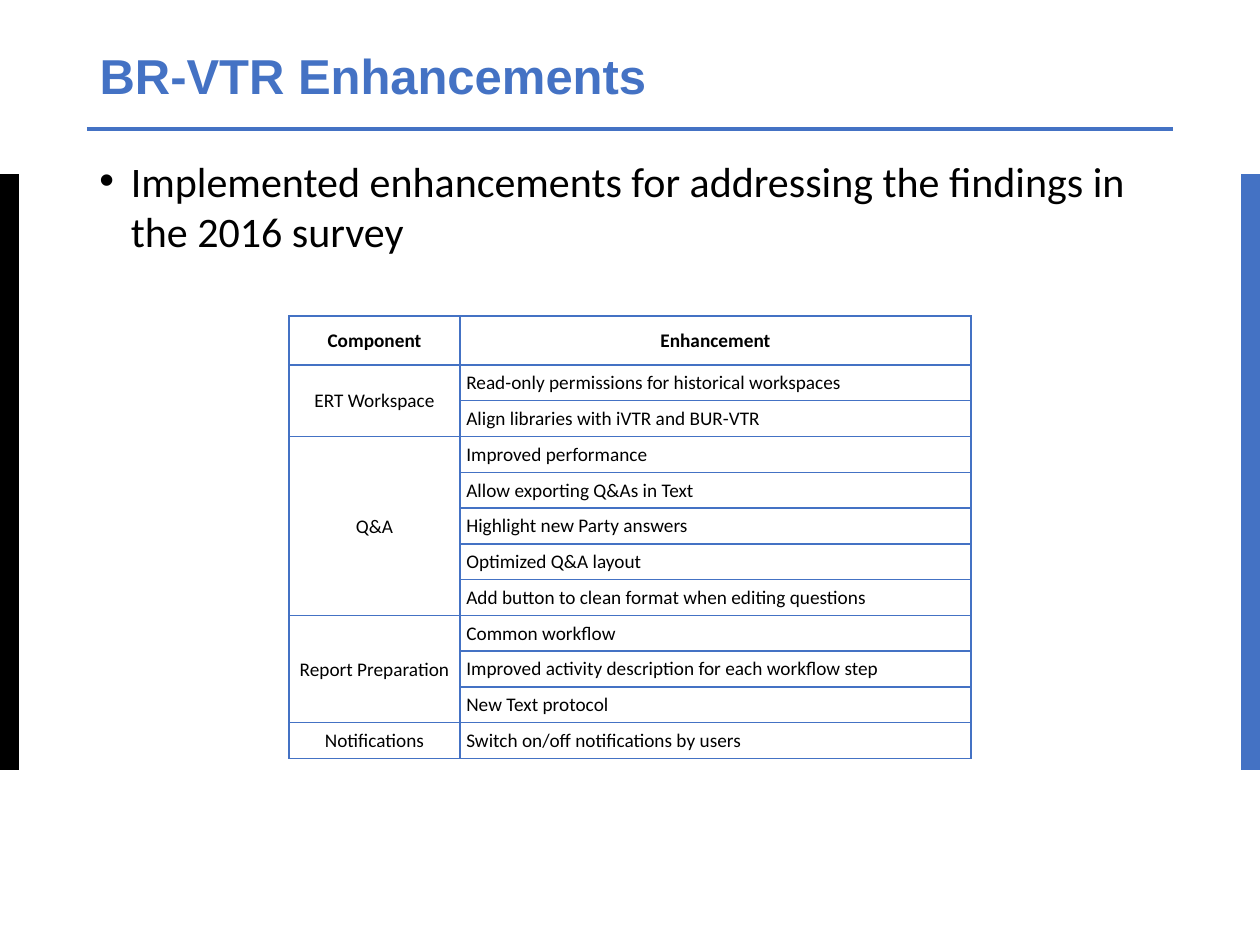
from lxml import etree
from pptx import Presentation
from pptx import util as u
from pptx.dml.color import RGBColor
from pptx.enum import shapes, text
from pptx.oxml import ns

COLORS = {"accent": "4472C4", "ink": "000000"}
SCALE = 914400 / 126

COMPONENTS = [
    ("ERT Workspace", [
        "Read-only permissions for historical workspaces",
        "Align libraries with iVTR and BUR-VTR",
    ]),
    ("Q&A", [
        "Improved performance",
        "Allow exporting Q&As in Text",
        "Highlight new Party answers",
        "Optimized Q&A layout",
        "Add button to clean format when editing questions",
    ]),
    ("Report Preparation", [
        "Common workflow",
        "Improved activity description for each workflow step",
        "New Text protocol",
    ]),
    ("Notifications", ["Switch on/off notifications by users"]),
]


def px(length):
    return u.Emu(round(length * SCALE))


def color(name):
    return RGBColor.from_string(COLORS[name])


def sub(parent, tag, **attributes):
    return etree.SubElement(parent, ns.qn(tag), attributes)


class Deck:
    def __init__(self, width, height):
        self.presentation = Presentation()
        self.presentation.slide_width = px(width)
        self.presentation.slide_height = px(height)
        self.slide = None

    def new_slide(self):
        layout = self.presentation.slide_layouts[5]
        self.slide = self.presentation.slides.add_slide(layout)

    def run(self, paragraph, words, size, name="Calibri", ink="ink", bold=False):
        run = paragraph.add_run()
        run.text = words
        run.font.size = u.Pt(size)
        run.font.name = name
        run.font.bold = bold
        run.font.color.rgb = color(ink)

    def title(self, words, left, top, width, height):
        heading = self.slide.shapes.title
        heading.left, heading.top = px(left), px(top)
        heading.width, heading.height = px(width), px(height)
        frame = heading.text_frame
        frame.vertical_anchor = text.MSO_ANCHOR.MIDDLE
        paragraph = frame.paragraphs[0]
        paragraph.alignment = text.PP_ALIGN.LEFT
        paragraph.line_spacing = 0.9
        self.run(paragraph, words, 28, "Arial", "accent", True)

    def rule(self, left, right, y):
        line = self.slide.shapes.add_connector(
            shapes.MSO_CONNECTOR.STRAIGHT, px(left), px(y), px(right), px(y))
        line.line.color.rgb = color("accent")
        line.line.width = u.Pt(2.25)
        sub(line._element.spPr, "a:effectLst")

    def bar(self, left, top, width, height, fill):
        bar = self.slide.shapes.add_shape(
            shapes.MSO_SHAPE.RECTANGLE, px(left), px(top), px(width), px(height))
        bar.shadow.inherit = False
        bar.fill.solid()
        bar.fill.fore_color.rgb = color(fill)
        bar.line.fill.background()

    def bullet(self, words, left, top, width, height):
        box = self.slide.shapes.add_textbox(px(left), px(top), px(width), px(height))
        box.text_frame.word_wrap = True
        paragraph = box.text_frame.paragraphs[0]
        properties = paragraph._p.get_or_add_pPr()
        properties.set("marL", str(u.Inches(0.25)))
        properties.set("indent", str(-u.Inches(0.25)))
        sub(properties, "a:buFont", typeface="Arial")
        sub(properties, "a:buChar", char="•")
        paragraph.space_after = u.Pt(6)
        self.run(paragraph, words, 24)

    def borders(self, cell):
        properties = cell._tc.get_or_add_tcPr()
        for side in ("a:lnL", "a:lnR", "a:lnT", "a:lnB"):
            line = sub(properties, side, w=str(u.Pt(1)))
            sub(sub(line, "a:solidFill"), "a:srgbClr", val=COLORS["accent"])

    def cell(self, cell, words, centered=False, bold=False):
        inset = u.Inches(0.01 if centered else 0.05)
        cell.margin_left = cell.margin_right = cell.margin_top = inset
        cell.margin_bottom = 0 if centered else inset
        cell.vertical_anchor = text.MSO_ANCHOR.MIDDLE
        paragraph = cell.text_frame.paragraphs[0]
        paragraph.alignment = text.PP_ALIGN.CENTER if centered else text.PP_ALIGN.LEFT
        self.run(paragraph, words, 11, bold=bold)

    def table(self, headings, groups, left, top, widths, header_height, row_height):
        count = sum(len(items) for _, items in groups)
        frame = self.slide.shapes.add_table(
            count + 1, len(widths), px(left), px(top),
            px(sum(widths)), px(header_height + count * row_height))
        table = frame.table
        table.first_row = table.horz_banding = False
        for column, width in zip(table.columns, widths):
            column.width = px(width)
        for index, row in enumerate(table.rows):
            row.height = px(row_height if index else header_height)
            for cell in row.cells:
                self.borders(cell)
                cell.fill.background()
        for column, heading in enumerate(headings):
            self.cell(table.cell(0, column), heading, centered=True, bold=True)
        start = 1
        for component, enhancements in groups:
            end = start + len(enhancements) - 1
            if end > start:
                table.cell(start, 0).merge(table.cell(end, 0))
            self.cell(table.cell(start, 0), component, centered=True)
            for row, enhancement in enumerate(enhancements, start):
                self.cell(table.cell(row, 1), enhancement)
            start = end + 1


def main():
    deck = Deck(1260, 945)
    deck.new_slide()
    deck.rule(87, 1173, 129)
    deck.bar(0, 174, 19, 596, "ink")
    deck.bar(1241, 174, 19, 596, "accent")
    deck.title("BR-VTR Enhancements", 87, 29, 1086, 99)
    deck.bullet("Implemented enhancements for addressing the findings in the 2016 survey",
                87, 149, 1086, 712)
    deck.table(("Component", "Enhancement"), COMPONENTS, 289, 316, (171, 511), 49, 27)
    deck.presentation.save("out.pptx")


if __name__ == "__main__":
    main()
